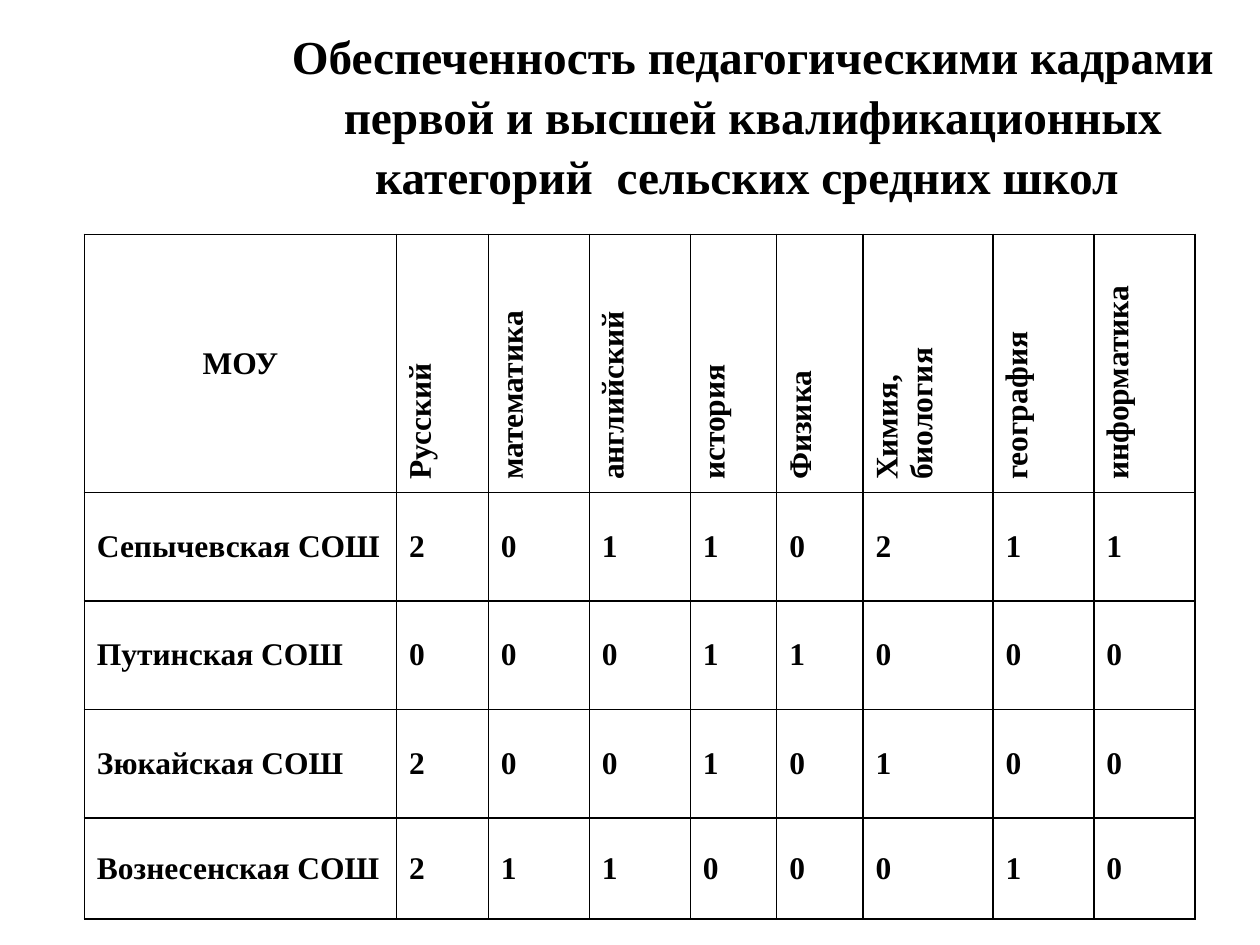
from pptx import Presentation
from pptx.dml.color import RGBColor
from pptx.enum import text
from pptx.oxml import parse_xml
from pptx.oxml.ns import nsdecls
from pptx.util import Pt

TITLE = ("Обеспеченность педагогическими кадрами первой и высшей "
         "квалификационных категорий  сельских средних школ ")
HEAD = ["МОУ", "Русский", "математика", "английский", "история", "Физика",
        "Химия, биология", "география", "информатика"]
SCHOOLS = [
    ("Сепычевская СОШ", 2, 0, 1, 1, 0, 2, 1, 1),
    ("Путинская СОШ", 0, 0, 0, 1, 1, 0, 0, 0),
    ("Зюкайская СОШ", 2, 0, 0, 1, 0, 1, 0, 0),
    ("Вознесенская СОШ", 2, 1, 1, 0, 0, 0, 1, 0),
]
WIDTHS = [178.4, 52.5, 57.7, 57.7, 49.4, 49.4, 74.2, 57.7, 57.7]
HEIGHTS = [118.8, 62, 62, 62, 57.6]
THEME = {"font": "Times New Roman", "ink": "000000", "title": 27, "cell": 18,
         "line": 1}


def style(para, size, center=False):
    para.alignment = text.PP_ALIGN.CENTER if center else text.PP_ALIGN.LEFT
    for run in para.runs:
        font = run.font
        font.name, font.size, font.bold = THEME["font"], Pt(size), True
        font.color.rgb = RGBColor.from_string(THEME["ink"])


def frame(cell):
    """Draw a thin line on all four sides of a cell."""
    props = cell._tc.get_or_add_tcPr()
    for i, side in enumerate(("lnL", "lnR", "lnT", "lnB")):
        props.insert(i, parse_xml(
            f'<a:{side} {nsdecls("a")} w="{Pt(THEME["line"])}"><a:solidFill>'
            f'<a:srgbClr val="{THEME["ink"]}"/></a:solidFill></a:{side}>'))


def add_title(slide):
    box = slide.shapes.add_textbox(Pt(140.4), Pt(20.2), Pt(579.6), Pt(90))
    body = box.text_frame
    body.word_wrap = True
    body.vertical_anchor = text.MSO_ANCHOR.MIDDLE
    body.text = TITLE
    para = body.paragraphs[0]
    para.line_spacing = 1.05
    style(para, THEME["title"], center=True)


def add_grid(slide):
    rows = [HEAD, *SCHOOLS]
    grid = slide.shapes.add_table(
        len(rows), len(HEAD), Pt(48.2), Pt(133.9),
        Pt(sum(WIDTHS)), Pt(sum(HEIGHTS))).table
    grid.first_row = grid.horz_banding = False
    for col, width in zip(grid.columns, WIDTHS):
        col.width = Pt(width)
    for r, (row, height) in enumerate(zip(rows, HEIGHTS)):
        grid.rows[r].height = Pt(height)
        for c, value in enumerate(row):
            cell = grid.cell(r, c)
            cell.text = str(value)
            cell.vertical_anchor = text.MSO_ANCHOR.MIDDLE
            cell.fill.background()
            frame(cell)
            if r == 0 and c > 0:
                cell._tc.get_or_add_tcPr().set("vert", "vert270")
            style(cell.text_frame.paragraphs[0], THEME["cell"],
                  center=r == c == 0)


def main():
    deck = Presentation()
    deck.slide_width, deck.slide_height = Pt(720), Pt(540)
    slide = deck.slides.add_slide(deck.slide_layouts[6])
    add_title(slide)
    add_grid(slide)
    deck.save("out.pptx")


if __name__ == "__main__":
    main()
